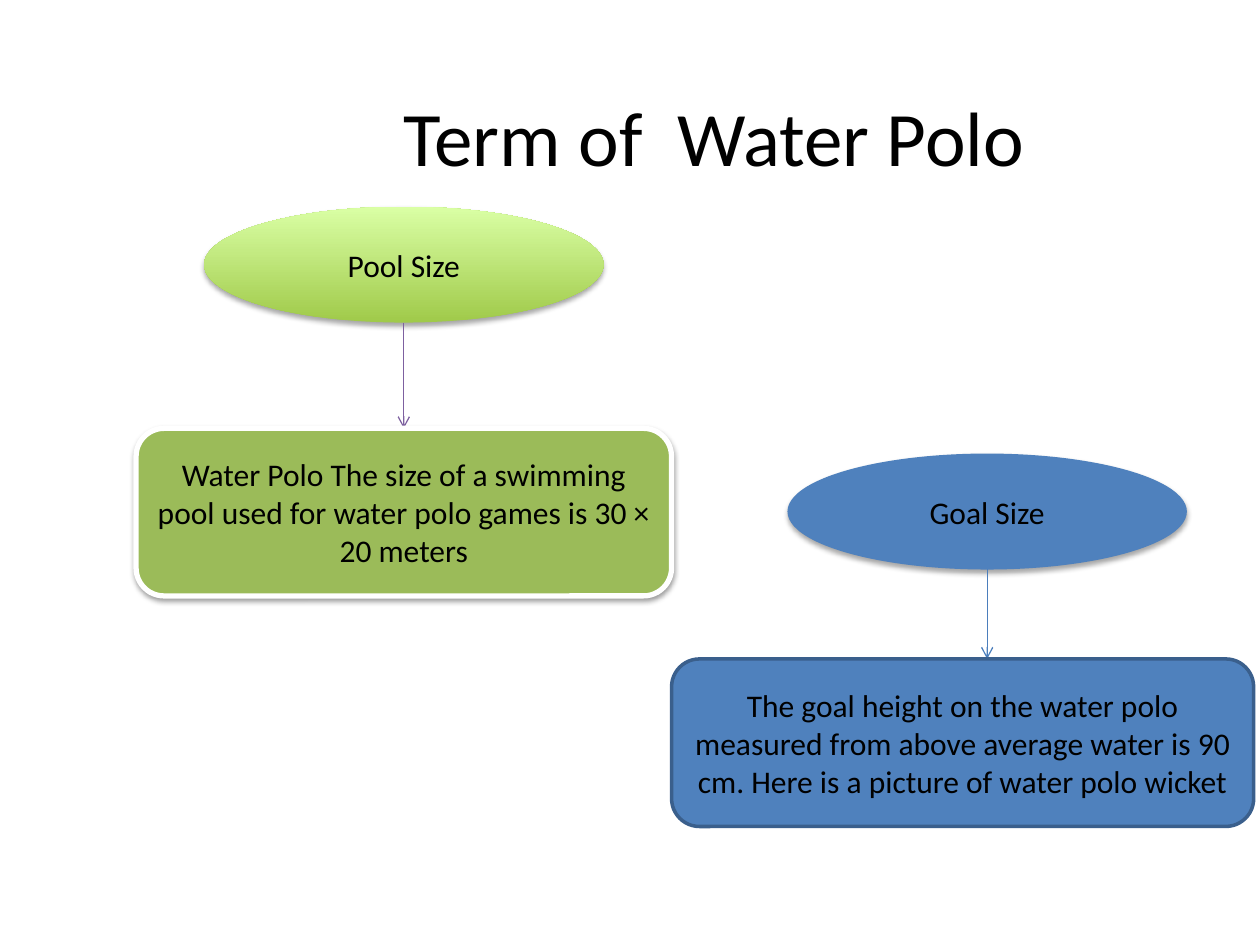
from dataclasses import dataclass

from lxml.etree import SubElement
from pptx import Presentation
from pptx.dml.color import RGBColor
from pptx.enum.shapes import MSO_CONNECTOR, MSO_SHAPE
from pptx.enum.text import MSO_ANCHOR, PP_ALIGN
from pptx.oxml.ns import qn
from pptx.util import Inches, Pt


@dataclass(frozen=True)
class Theme:
    """Colours, font and type sizes of the slide."""
    font: str = "Calibri"
    title_size: int = 44
    body_size: int = 18
    text: str = "000000"
    white: str = "FFFFFF"
    green: str = "9BBB59"
    green_dark: str = "A0CA4A"
    green_light: str = "DAFFA5"
    blue: str = "4F81BD"
    blue_border: str = "3A5F8C"
    blue_arrow: str = "4B7EBC"
    purple_arrow: str = "7D60A0"


THEME = Theme()


def color(value):
    """Turn a hex string into a colour."""
    return RGBColor.from_string(value)


def write_text(shape, text, size):
    """Write one centred paragraph into a shape."""
    frame = shape.text_frame
    frame.word_wrap = True
    frame.vertical_anchor = MSO_ANCHOR.MIDDLE
    para = frame.paragraphs[0]
    para.alignment = PP_ALIGN.CENTER
    span = para.add_run()
    span.text = text
    span.font.name = THEME.font
    span.font.size = Pt(size)
    span.font.color.rgb = color(THEME.text)


def add_shadow(shape, opacity, distance):
    """Give a shape a soft shadow that falls downwards."""
    effects = shape._element.spPr.find(qn("a:effectLst"))
    shadow = SubElement(effects, qn("a:outerShdw"), blurRad=str(Pt(3.1)),
                        dist=str(Pt(distance)), dir="5400000", rotWithShape="0")
    black = SubElement(shadow, qn("a:srgbClr"), val="000000")
    SubElement(black, qn("a:alpha"), val=str(opacity * 1000))


def add_node(page, kind, box, text, fill, border=None, border_width=0):
    """Add a labelled shape with a plain or two-colour fill."""
    shape = page.shapes.add_shape(kind, *map(Inches, box))
    shape.shadow.inherit = False
    if isinstance(fill, tuple):
        shape.fill.gradient()
        shape.fill.gradient_angle = 90
        for stop, value in zip(shape.fill.gradient_stops, fill):
            stop.color.rgb = color(value)
    else:
        shape.fill.solid()
        shape.fill.fore_color.rgb = color(fill)
    if border:
        shape.line.color.rgb = color(border)
        shape.line.width = Pt(border_width)
    else:
        shape.line.fill.background()
    write_text(shape, text, THEME.body_size)
    return shape


def add_arrow(page, x, top, bottom, line_color):
    """Add a thin downward arrow."""
    arrow = page.shapes.add_connector(
        MSO_CONNECTOR.STRAIGHT, *map(Inches, (x, top, x, bottom)))
    arrow.line.color.rgb = color(line_color)
    arrow.line.width = Pt(0.75)
    SubElement(arrow.line._get_or_add_ln(), qn("a:tailEnd"), type="arrow")
    SubElement(arrow._element.spPr, qn("a:effectLst"))


def add_title(page, box, text):
    """Place the title placeholder in its box."""
    title = page.shapes.title
    title.left, title.top, title.width, title.height = map(Inches, box)
    write_text(title, text, THEME.title_size)


def add_term(page, term_box, detail_box, term, detail, term_fill, arrow_color,
             detail_fill, border, border_width):
    """Add a term, an arrow and its explanation."""
    left, top, width, height = term_box
    oval = add_node(page, MSO_SHAPE.OVAL, term_box, term, term_fill)
    add_shadow(oval, 35, 1.8)
    add_arrow(page, left + width / 2, top + height, detail_box[1], arrow_color)
    return add_node(page, MSO_SHAPE.ROUNDED_RECTANGLE, detail_box, detail,
                    detail_fill, border, border_width)


def main():
    """Build and save the slide."""
    deck = Presentation()
    deck.slide_width, deck.slide_height = Inches(10), Inches(7.5)
    page = deck.slides.add_slide(deck.slide_layouts[5])
    add_title(page, (1.57, 0.45, 8.2, 1.25), "Term of  Water Polo")
    pool = add_term(
        page, (1.62, 1.64, 3.17, 0.92), (1.08, 3.4, 4.25, 1.33), "Pool Size",
        "Water Polo The size of a swimming pool used for water polo games "
        "is 30 × 20 meters",
        (THEME.green_dark, THEME.green_light), THEME.purple_arrow,
        THEME.green, THEME.white, 3)
    add_shadow(pool, 38, 1.6)
    add_term(
        page, (6.25, 3.6, 3.17, 0.92), (5.33, 5.23, 4.62, 1.33), "Goal Size",
        "The goal height on the water polo measured from above average water "
        "is 90 cm. Here is a picture of water polo wicket",
        THEME.blue, THEME.blue_arrow, THEME.blue, THEME.blue_border, 2)
    deck.save("out.pptx")


if __name__ == "__main__":
    main()
